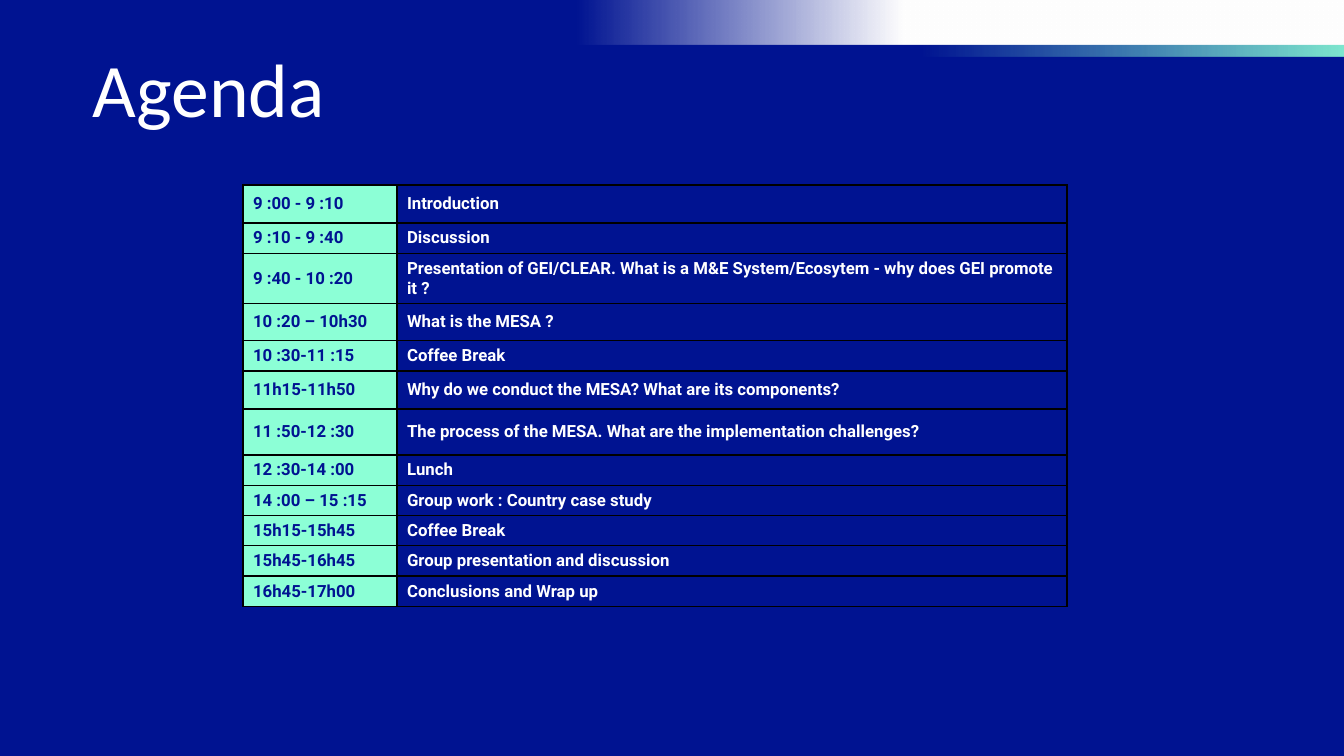
import pptx
import pptx.dml.color
import pptx.enum.shapes
import pptx.enum.text
import pptx.oxml
import pptx.oxml.ns
import pptx.util

EMU_PER_PX = 914400 / 100.8
NAVY, MINT, WHITE = "001391", "8CFFD6", "FFFFFF"


def px(length):
    return pptx.util.Emu(round(length * EMU_PER_PX))


def color(hex_code):
    return pptx.dml.color.RGBColor.from_string(hex_code)


deck = pptx.Presentation()
deck.slide_width, deck.slide_height = px(1344), px(756)
page = deck.slides.add_slide(deck.slide_layouts[6])
page.background.fill.solid()
page.background.fill.fore_color.rgb = color(NAVY)

# Header bars, fading in from transparent on the left
for left, top, bar_color, fade_start, fade_end in [
    (-33, 12, MINT, 0.67, 1),
    (-50, 0, WHITE, 0.44, 0.67),
]:
    bar = page.shapes.add_shape(
        pptx.enum.shapes.MSO_SHAPE.RECTANGLE, px(left), px(top), px(1424), px(45))
    bar.shadow.inherit = False
    bar.line.fill.background()
    bar.fill.gradient()
    bar.fill.gradient_angle = 0
    stops = bar.fill.gradient_stops
    for stop, position in zip(stops, (fade_start, fade_end)):
        stop.color.rgb = color(bar_color)
        stop.position = position
    first_color = bar.fill._xPr.find(".//" + pptx.oxml.ns.qn("a:srgbClr"))
    first_color.append(pptx.oxml.parse_xml(
        f'<a:alpha {pptx.oxml.ns.nsdecls("a")} val="0"/>'))

title = page.shapes.add_textbox(px(83), px(16), px(1159), px(154)).text_frame
title.word_wrap = True
title.vertical_anchor = pptx.enum.text.MSO_ANCHOR.MIDDLE
title.text = "Agenda"
heading = title.paragraphs[0]
heading.line_spacing = 0.9
heading.font.name = "Calibri"
heading.font.size = pptx.util.Pt(54)
heading.font.color.rgb = color(WHITE)

# Row height, time, session
sessions = [
    (38, "9 :00 - 9 :10", "Introduction"),
    (30, "9 :10 - 9 :40", "Discussion"),
    (50, "9 :40 - 10 :20",
     "Presentation of GEI/CLEAR. What is a M&E System/Ecosytem - why does GEI promote it ?"),
    (37, "10 :20 – 10h30", "What is the MESA ?"),
    (30, "10 :30-11 :15", "Coffee Break"),
    (38, "11h15-11h50", "Why do we conduct the MESA? What are its components?"),
    (46, "11 :50-12 :30",
     "The process of the MESA. What are the implementation challenges?"),
    (30, "12 :30-14 :00", "Lunch"),
    (30, "14 :00 – 15 :15", "Group work : Country case study"),
    (30, "15h15-15h45", "Coffee Break"),
    (30, "15h45-16h45", "Group presentation and discussion"),
    (29, "16h45-17h00", "Conclusions and Wrap up"),
]
table_height = sum(height for height, time, session in sessions)
agenda = page.shapes.add_table(
    len(sessions), 2, px(243), px(185), px(824), px(table_height)).table
agenda.first_row = agenda.horz_banding = False
agenda.columns[0].width, agenda.columns[1].width = px(154), px(670)

for row, (height, *texts) in zip(agenda.rows, sessions):
    row.height = px(height)
    for cell, text, text_color in zip(row.cells, texts, (NAVY, WHITE)):
        cell.text = text
        cell.vertical_anchor = pptx.enum.text.MSO_ANCHOR.MIDDLE
        font = cell.text_frame.paragraphs[0].font
        font.name = "Roboto"
        font.size = pptx.util.Pt(12)
        font.bold = True
        font.color.rgb = color(text_color)
        for side in "LRTB":
            cell._tc.tcPr.append(pptx.oxml.parse_xml(
                f'<a:ln{side} {pptx.oxml.ns.nsdecls("a")} w="12700"><a:solidFill>'
                f'<a:srgbClr val="000000"/></a:solidFill></a:ln{side}>'))
        cell.fill.background()
    time_cell = row.cells[0]
    time_cell.fill.solid()
    time_cell.fill.fore_color.rgb = color(MINT)

deck.save("out.pptx")
